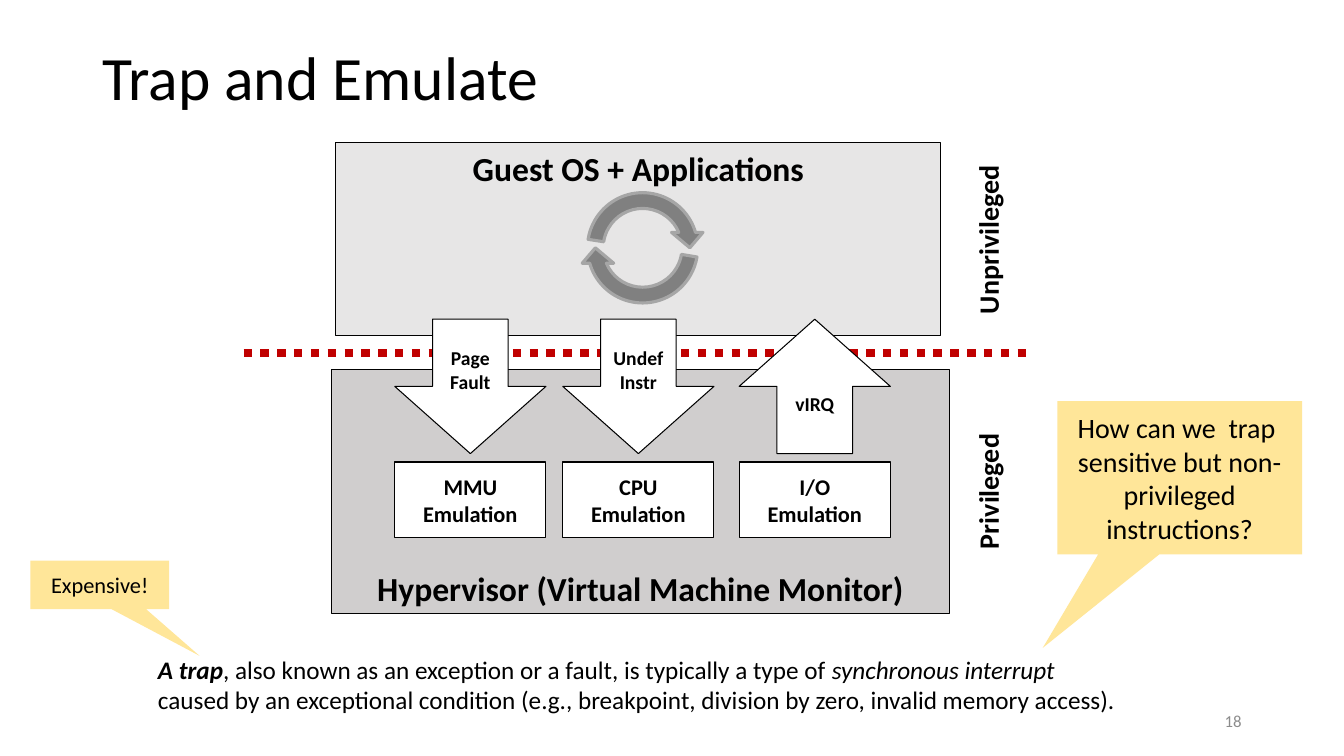
from pptx import Presentation
from pptx.dml.color import RGBColor
from pptx.enum.dml import MSO_LINE
from pptx.enum.shapes import MSO_CONNECTOR, MSO_SHAPE
from pptx.enum.text import MSO_ANCHOR, MSO_AUTO_SIZE, PP_ALIGN
from pptx.oxml.ns import qn
from pptx.util import Pt
from lxml import etree

PX = 9525
FONT = "Calibri"

BLACK = RGBColor(0x00, 0x00, 0x00)
WHITE = RGBColor(0xFF, 0xFF, 0xFF)
GUEST_GRAY = RGBColor(0xE7, 0xE6, 0xE6)
HYPERVISOR_GRAY = RGBColor(0xD0, 0xCE, 0xCE)
CYCLE_FILL = RGBColor(0x80, 0x80, 0x80)
CYCLE_LINE = RGBColor(0xA6, 0xA6, 0xA6)
NUMBER_GRAY = RGBColor(0x8C, 0x8C, 0x8C)
BOUNDARY_RED = RGBColor(0xC0, 0x00, 0x00)
CALLOUT_YELLOW = RGBColor(0xFF, 0xE6, 0x99)

RECTANGLE = MSO_SHAPE.RECTANGLE
DOWN_ARROW = MSO_SHAPE.DOWN_ARROW
UP_ARROW = MSO_SHAPE.UP_ARROW
CIRCULAR_ARROW = MSO_SHAPE.CIRCULAR_ARROW
CALLOUT = MSO_SHAPE.RECTANGULAR_CALLOUT
TOP, MIDDLE, BOTTOM = MSO_ANCHOR.TOP, MSO_ANCHOR.MIDDLE, MSO_ANCHOR.BOTTOM
LEFT, CENTER, RIGHT = PP_ALIGN.LEFT, PP_ALIGN.CENTER, PP_ALIGN.RIGHT


def add_box(shapes, kind, box, fill, line=None, width=0.75):
    """Add a shadowless preset shape; box is left, top, width, height in px."""
    shape = shapes.add_shape(kind, *(value * PX for value in box))
    shape.shadow.inherit = False
    shape.fill.solid()
    shape.fill.fore_color.rgb = fill
    if line is None:
        shape.line.fill.background()
    else:
        shape.line.color.rgb = line
        shape.line.width = Pt(width)
    return shape


def write(shape, paragraphs, size, align=CENTER, anchor=MIDDLE, color=BLACK):
    """Fill a shape with paragraphs, each a list of (text, bold, italic) runs."""
    frame = shape.text_frame
    frame.word_wrap = True
    frame.vertical_anchor = anchor
    for index, runs in enumerate(paragraphs):
        paragraph = frame.add_paragraph() if index else frame.paragraphs[0]
        paragraph.alignment = align
        for text, bold, italic in runs:
            run = paragraph.add_run()
            run.text = text
            run.font.name = FONT
            run.font.size = Pt(size)
            run.font.bold = bold
            run.font.italic = italic
            run.font.color.rgb = color
    return frame


presentation = Presentation()
presentation.slide_width = 1280 * PX
presentation.slide_height = 720 * PX
slide = presentation.slides.add_slide(presentation.slide_layouts[6])
shapes = slide.shapes

# Title and slide number
title = shapes.add_textbox(88 * PX, 7 * PX, 1104 * PX, 139 * PX)
frame = write(title, [[("Trap and Emulate", False, False)]], 44, LEFT)
frame.paragraphs[0].line_spacing = 0.9
number = shapes.add_textbox(904 * PX, 667 * PX, 288 * PX, 38 * PX)
write(number, [[("18", False, False)]], 12, RIGHT, color=NUMBER_GRAY)

# Privilege boundary
boundary = shapes.add_connector(
    MSO_CONNECTOR.STRAIGHT, 232 * PX, 336 * PX, 984 * PX, 336 * PX)
boundary.line.color.rgb = BOUNDARY_RED
boundary.line.width = Pt(6)
boundary.line.dash_style = MSO_LINE.ROUND_DOT
etree.SubElement(boundary._element.spPr, qn("a:effectLst"))

# Guest with its execution cycle
guest = add_box(shapes, RECTANGLE, (320, 136, 576, 184), GUEST_GRAY, BLACK)
write(guest, [[("Guest OS + Applications", True, False)]], 24, anchor=TOP)
cycle = shapes.add_group_shape()
for rotation, start_angle in ((0, 113.3), (180, 113.75)):
    arc = add_box(cycle.shapes, CIRCULAR_ARROW, (552, 176, 120, 120),
                  CYCLE_FILL, CYCLE_LINE, 2.25)
    arc.rotation = rotation
    for index, value in enumerate((0.125, 11.42, 204.58, start_angle, 0.125)):
        arc.adjustments[index] = value

# Hypervisor with its traps and emulation units
hypervisor = add_box(shapes, RECTANGLE, (316, 352, 588, 232), HYPERVISOR_GRAY, BLACK)
write(hypervisor, [[("Hypervisor (Virtual Machine Monitor)", True, False)]],
      24, anchor=BOTTOM)
for left, arrow_kind, event, unit in (
    (376, DOWN_ARROW, ("Page", "Fault"), "MMU"),
    (536, DOWN_ARROW, ("Undef", "Instr"), "CPU"),
    (704, UP_ARROW, ("vIRQ",), "I/O"),
):
    arrow = add_box(shapes, arrow_kind, (left, 304, 144, 128), WHITE, BLACK)
    write(arrow, [[(word, True, False)] for word in event], 14)
    emulation = add_box(shapes, RECTANGLE, (left, 440, 144, 72), WHITE, BLACK)
    write(emulation, [[(word, True, False)] for word in (unit, "Emulation")], 16)

# Vertical mode labels
for mode, top, height in (("Unprivileged", 152, 153), ("Privileged", 408, 120)):
    label = shapes.add_textbox(920 * PX, top * PX, 52 * PX, height * PX)
    frame = write(label, [[(mode, True, False)]], 20, anchor=TOP)
    frame.word_wrap = False
    frame.auto_size = MSO_AUTO_SIZE.SHAPE_TO_FIT_TEXT
    label._element.txBody.find(qn("a:bodyPr")).set("vert", "vert270")

# Definition
definition = shapes.add_textbox(141 * PX, 618 * PX, 938 * PX, 68 * PX)
frame = write(definition, [[
    ("A trap", True, True),
    (", also known as an exception or a fault, is typically a type of ", False, False),
    ("synchronous interrupt ", False, True),
    ("caused by an exceptional condition (e.g., breakpoint, division by zero, "
     "invalid memory access).", False, False),
]], 18, LEFT, TOP)
frame.auto_size = MSO_AUTO_SIZE.SHAPE_TO_FIT_TEXT

# Callouts
for text, size, box, pointer in (
    ("Expensive!", 16, (29, 534, 132, 46), (0.72, 1.47)),
    ("How can we  trap  sensitive but non-privileged instructions?", 20,
     (1007, 382, 233, 146), (-0.56, 1.11)),
):
    callout = add_box(shapes, CALLOUT, box, CALLOUT_YELLOW)
    callout.adjustments[0], callout.adjustments[1] = pointer
    write(callout, [[(text, False, False)]], size)

presentation.save("out.pptx")
